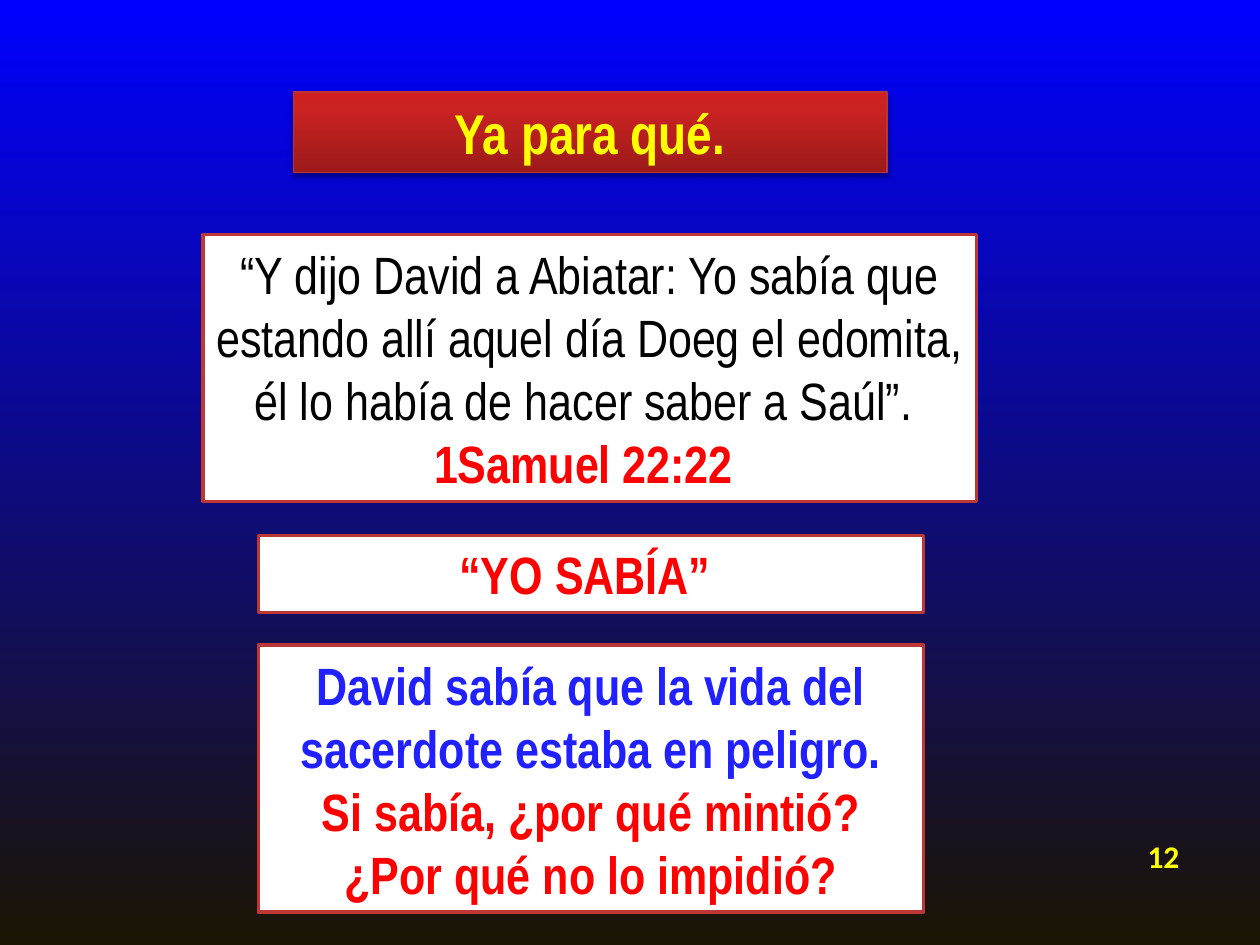
from copy import deepcopy
from dataclasses import dataclass

from lxml import etree
from pptx import Presentation
from pptx.dml.color import RGBColor
from pptx.enum.shapes import MSO_SHAPE
from pptx.enum.text import MSO_ANCHOR, MSO_AUTO_SIZE, PP_ALIGN
from pptx.oxml import parse_xml
from pptx.oxml.ns import nsdecls, qn
from pptx.util import Inches, Pt

RECT = MSO_SHAPE.RECTANGLE
MIDDLE, TOP = MSO_ANCHOR.MIDDLE, MSO_ANCHOR.TOP
GROW = MSO_AUTO_SIZE.SHAPE_TO_FIT_TEXT
CENTER, RIGHT = PP_ALIGN.CENTER, PP_ALIGN.RIGHT


@dataclass(frozen=True)
class Theme:
    face: str = "Arial Narrow"
    num_face: str = "Calibri"
    head: int = 32
    body: int = 30
    num: int = 18
    yellow: str = "FFFF00"
    red: str = "FF0000"
    blue: str = "2121FF"
    black: str = "000000"
    white: str = "FFFFFF"
    edge: str = "BD3737"
    head_edge: str = "BC3333"
    back: tuple = ("1B1503", "0000FF")
    band: tuple = ("9C1A1A", "CB2222", "CF1F1F")


T = Theme()


@dataclass(frozen=True)
class Line:
    text: str
    color: str
    bold: bool = True
    size: int = T.body
    face: str = T.face
    align: PP_ALIGN = CENTER


@dataclass(frozen=True)
class Box:
    left: float
    top: float
    width: float
    height: float
    lines: tuple[Line, ...]
    edge: str = T.edge
    weight: float = 2


def rgb(code: str) -> RGBColor:
    return RGBColor.from_string(code)


def write(frame, lines: tuple[Line, ...], **extra) -> None:
    """Fill a text frame with one paragraph per line."""
    form = {"word_wrap": True, "auto_size": GROW, "vertical_anchor": MIDDLE} | extra
    for name, value in form.items():
        setattr(frame, name, value)
    for i, line in enumerate(lines):
        para = frame.add_paragraph() if i else frame.paragraphs[0]
        para.alignment = line.align
        run = para.add_run()
        run.text = line.text
        font = {"name": line.face, "size": Pt(line.size), "bold": line.bold}
        for name, value in font.items():
            setattr(run.font, name, value)
        run.font.color.rgb = rgb(line.color)


def shade(fill, colors: tuple[str, str]) -> None:
    """Apply a two-colour gradient that runs from bottom to top."""
    fill.gradient()
    fill.gradient_angle = 90
    for stop, code in zip(fill.gradient_stops, colors):
        stop.color.rgb = rgb(code)


def draw(slide, box: Box):
    """Draw a white framed box with its text."""
    shape = slide.shapes.add_shape(
        RECT, *map(Inches, (box.left, box.top, box.width, box.height)))
    shape.shadow.inherit = False
    shape.fill.solid()
    shape.fill.fore_color.rgb = rgb(T.white)
    shape.line.color.rgb = rgb(box.edge)
    shape.line.width = Pt(box.weight)
    write(shape.text_frame, box.lines)
    return shape


def adorn(shape) -> None:
    """Give the title its three-stop gradient and soft shadow."""
    low, mid, high = T.band
    shade(shape.fill, (low, high))
    props = shape._element.spPr
    first = props.find(".//" + qn("a:gs"))
    extra = deepcopy(first)
    first.addnext(extra)
    stop = shape.fill.gradient_stops[1]
    stop.position = 0.8
    stop.color.rgb = rgb(mid)
    glow = parse_xml(
        f'<a:outerShdw {nsdecls("a")} blurRad="{Pt(3.1)}" dist="{Pt(1.8)}" '
        'dir="5400000" rotWithShape="0"/>')
    tint = etree.SubElement(glow, qn("a:srgbClr"), val=T.black)
    etree.SubElement(tint, qn("a:alpha"), val="35000")
    props.find(qn("a:effectLst")).append(glow)


TITLE = Box(2.33, 0.73, 4.71, 0.64,
            (Line("Ya para qué.", T.yellow, size=T.head),), T.head_edge, 0.75)
VERSE = Box(1.61, 1.86, 6.14, 2.12, (
    Line("“Y dijo David a Abiatar: Yo sabía que estando allí aquel día Doeg "
         "el edomita, él lo había de hacer saber a Saúl”. ", T.black, False),
    Line("1Samuel 22:22 ", T.red)))
QUOTE = Box(2.05, 4.25, 5.28, 0.61, (Line("“YO SABÍA” ", T.red),))
POINT = Box(2.05, 5.12, 5.28, 2.12, (
    Line("David sabía que la vida del sacerdote estaba en peligro.", T.blue),
    Line("Si sabía, ¿por qué mintió? ¿Por qué no lo impidió?", T.red)))


def main() -> None:
    deck = Presentation()
    deck.slide_width, deck.slide_height = Inches(10), Inches(7.5)
    slide = deck.slides.add_slide(deck.slide_layouts[6])
    shade(slide.background.fill, T.back)

    # Title and text boxes
    adorn(draw(slide, TITLE))
    for box in (VERSE, QUOTE, POINT):
        draw(slide, box)

    # Page number
    page = slide.shapes.add_textbox(*map(Inches, (9, 6.59, 0.46, 0.4)))
    mark = Line("12", T.yellow, size=T.num, face=T.num_face, align=RIGHT)
    write(page.text_frame, (mark,), word_wrap=False, vertical_anchor=TOP)

    deck.save("out.pptx")


if __name__ == "__main__":
    main()
